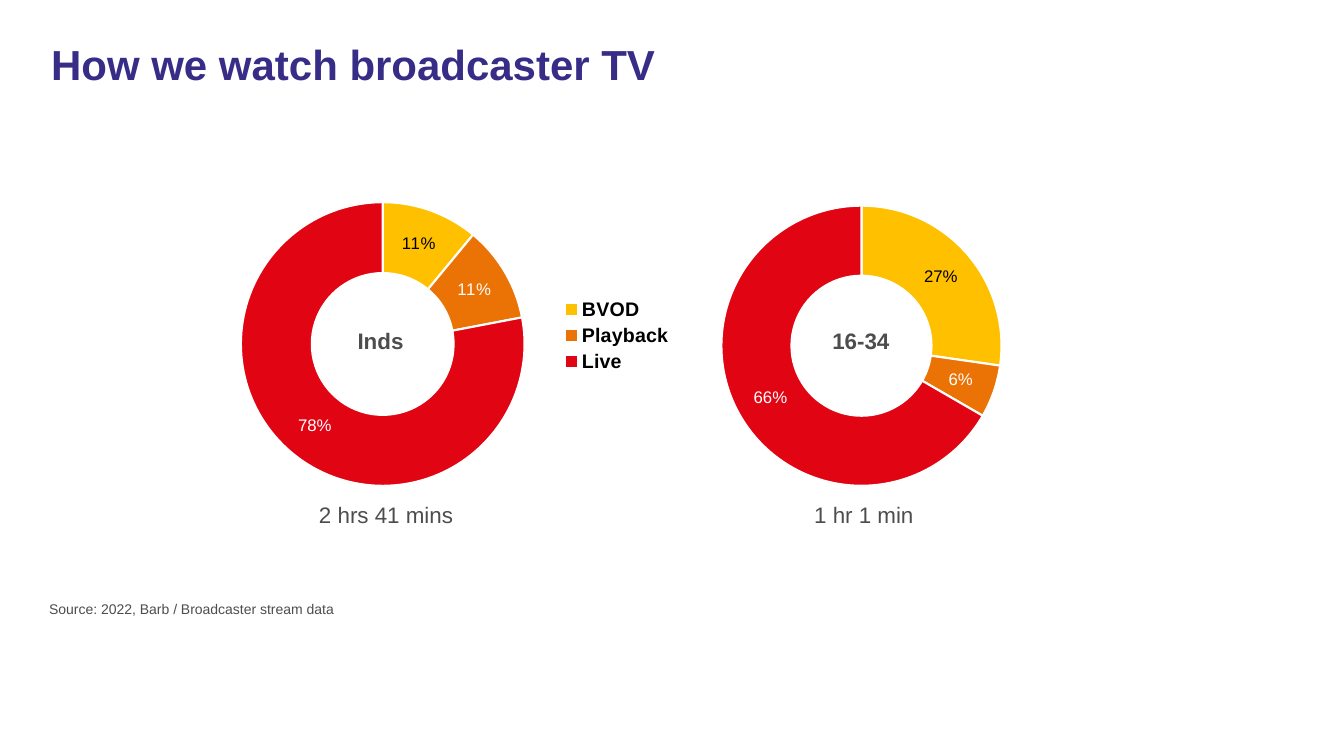
from lxml import etree
from pptx import Presentation
from pptx.chart.data import CategoryChartData as ChartData
from pptx.dml.color import RGBColor as Rgb
from pptx.enum.chart import XL_CHART_TYPE as ChartType, XL_LEGEND_POSITION as LegendPosition
from pptx.enum.text import PP_ALIGN as Align
from pptx.oxml.ns import qn
from pptx.util import Cm, Pt

COLOURS = {"title": "372D87", "text": "4D4D4D", "black": "000000", "white": "FFFFFF",
           "BVOD": "FFC000", "Playback": "EB7305", "Live": "E10514"}
VIEWING = ["BVOD", "Playback", "Live"]


def set_font(font, colour, **values):
    font.name = "Arial"
    font.color.rgb = Rgb.from_string(COLOURS[colour])
    for name, value in values.items():
        setattr(font, name, value)


def add_text(text, place, colour, align=Align.LEFT, spacing=1.0, **values):
    box = page.shapes.add_textbox(*map(Cm, place))
    box.text_frame.word_wrap = True
    para = box.text_frame.paragraphs[0]
    para.alignment, para.line_spacing = align, spacing
    span = para.add_run()
    span.text = text
    set_font(span.font, colour, **values)


deck = Presentation()
deck.slide_width, deck.slide_height = Cm(33.87), Cm(19.05)
page = deck.slides.add_slide(deck.slide_layouts[6])

# Title and source
add_text("How we watch broadcaster TV", (1.04, 0.99, 31.5, 2.84), "title",
         spacing=0.9, size=Pt(30), bold=True)
add_text("Source: 2022, Barb / Broadcaster stream data", (0.99, 15.01, 31.5, 0.84),
         "text", size=Pt(10))

# One ring per audience: name, time, shares, chart left and width,
# plot area as fractions of the chart, name left and width, time left
audiences = [
    ("Inds", "2 hrs 41 mins", (11, 11, 78), (5.46, 11.76),
     (0.052, 0.131, 0.608, 0.783), (8.23, 2.72), 7.52),
    ("16-34", "1 hr 1 min", (27, 6, 66), (17.48, 12.37),
     (0.052, 0.166, 0.58, 0.722), (20.5, 2.39), 19.56),
]
for audience, time, shares, (left, width), plot_area, (name_left, name_width), time_left in audiences:
    data = ChartData(number_format='0"%"')
    data.categories = VIEWING
    data.add_series(audience, shares)
    chart = page.shapes.add_chart(ChartType.DOUGHNUT, Cm(left), Cm(3.56),
                                  Cm(width), Cm(9.78), data).chart
    chart.has_title = False
    set_font(chart.font, "black", size=Pt(10))

    # Only the first ring carries the legend
    chart.has_legend = audience == "Inds"
    if chart.has_legend:
        chart.legend.position = LegendPosition.RIGHT
        chart.legend.include_in_layout = False
        set_font(chart.legend.font, "black", size=Pt(14), bold=True)

    # Share labels
    plot = chart.plots[0]
    plot.vary_by_categories = True
    plot.has_data_labels = True
    labels = plot.data_labels
    labels.show_value, labels.show_percentage = True, False
    labels.number_format, labels.number_format_is_linked = '0"%"', False
    set_font(labels.font, "white", size=Pt(12))

    # Slices
    for index, kind in enumerate(VIEWING):
        point = plot.series[0].points[index]
        point.format.fill.solid()
        point.format.fill.fore_color.rgb = Rgb.from_string(COLOURS[kind])
        point.format.line.color.rgb = Rgb.from_string(COLOURS["white"])
        point.format.line.width = Pt(1.5)
        set_font(point.data_label.font, "black" if kind == "BVOD" else "white", size=Pt(12))

    # Fixed plot area
    area = plot._element.getparent()
    for layout in area.findall(qn("c:layout")):
        area.remove(layout)
    layout = etree.Element(qn("c:layout"))
    area.insert(0, layout)
    manual = etree.SubElement(layout, qn("c:manualLayout"))
    settings = [("layoutTarget", "inner"), ("xMode", "edge"), ("yMode", "edge"),
                *zip("xywh", plot_area)]
    for tag, value in settings:
        etree.SubElement(manual, qn(f"c:{tag}")).set("val", str(value))

    # Viewing time below and audience name in the hole
    add_text(time, (time_left, 12.5, 4.42, 0.94), "text", Align.CENTER, size=Pt(16))
    add_text(audience, (name_left, 8.13, name_width, 0.94), "text", Align.CENTER,
             size=Pt(16), bold=True)

deck.save("out.pptx")
